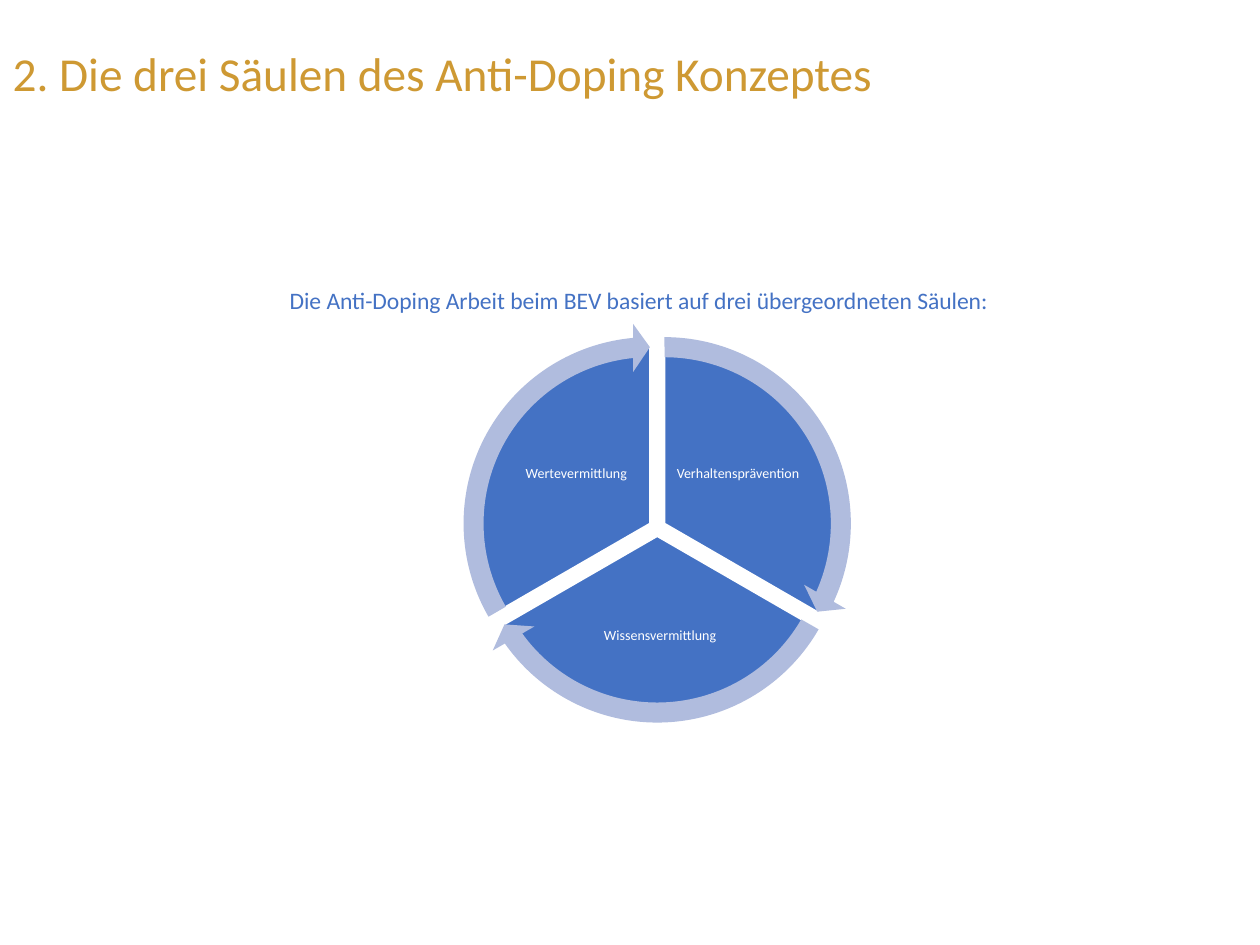
from math import cos, radians, sin

from pptx import Presentation
from pptx.dml.color import RGBColor
from pptx.enum.shapes import MSO_SHAPE
from pptx.enum.text import MSO_ANCHOR, MSO_AUTO_SIZE, PP_ALIGN
from pptx.util import Cm, Pt

COLORS = {"title": "CE9933", "blue": "4472C4", "arrow": "B0BCDE", "white": "FFFFFF"}
FONT = "Calibri"

# label, label offset from the wheel centre and label size (cm), clockwise from the top
PILLARS = [
    ("Verhaltensprävention", 1.63, -1.09, 2.57, 2.13),
    ("Wissensvermittlung", 0.06, 2.18, 3.86, 1.88),
    ("Wertevermittlung", -1.63, -1.09, 2.57, 2.13),
]
SWEEP = 360 / len(PILLARS)


def rgb(name):
    return RGBColor.from_string(COLORS[name])


def format_text(p, size, color, align=PP_ALIGN.LEFT):
    p.alignment = align
    p.font.name = FONT
    p.font.size = Pt(size)
    p.font.color.rgb = rgb(color)


def centred_box(cx, cy, w, h):
    return Cm(cx - w / 2), Cm(cy - h / 2), Cm(w), Cm(h)


def adj_angle(degrees):
    """Convert degrees to the unit that shape adjustments use."""
    return degrees % 360 * 0.6


def add_round_shape(shapes, kind, cx, cy, diameter, color, adjustments):
    sp = shapes.add_shape(kind, *centred_box(cx, cy, diameter, diameter))
    sp.shadow.inherit = False
    sp.fill.solid()
    sp.fill.fore_color.rgb = rgb(color)
    sp.line.fill.background()
    for i, value in enumerate(adjustments):
        sp.adjustments[i] = value
    return sp


def add_label(shapes, text, cx, cy, w, h):
    tf = shapes.add_textbox(*centred_box(cx, cy, w, h)).text_frame
    tf.word_wrap = True
    tf.vertical_anchor = MSO_ANCHOR.MIDDLE
    tf.margin_left = tf.margin_right = tf.margin_top = tf.margin_bottom = Cm(0.03)
    p = tf.paragraphs[0]
    p.text = text
    p.line_spacing = 0.9
    format_text(p, 8, "white", PP_ALIGN.CENTER)


def add_wheel(s, cx, cy, pie_size, arrow_size, gap):
    """Draw the pillars as sectors moved out by gap, each with an arrow around it."""
    shapes = s.shapes.add_group_shape().shapes
    arrows = []
    for i, (text, dx, dy, w, h) in enumerate(PILLARS):
        start = 270 + i * SWEEP
        end = start + SWEEP
        middle = radians(start + SWEEP / 2)
        x, y = cx + gap * cos(middle), cy + gap * sin(middle)
        sector = add_round_shape(shapes, MSO_SHAPE.PIE, x, y, pie_size, "blue",
                                 [adj_angle(start), adj_angle(end)])
        sector.line.color.rgb = rgb("white")
        sector.line.width = Pt(1)
        add_label(shapes, text, cx + dx, cy + dy, w, h)
        arrows.append((x, y, start, end))
    head = 5.46
    for x, y, start, end in arrows:
        add_round_shape(shapes, MSO_SHAPE.CIRCULAR_ARROW, x, y, arrow_size, "arrow",
                        [0.05, adj_angle(head), adj_angle(end - head),
                         adj_angle(start), 0.06])


def add_title(s, left, top, width, height):
    title = s.shapes.title
    title.left, title.top, title.width, title.height = map(Cm, (left, top, width, height))
    tf = title.text_frame
    tf.vertical_anchor = MSO_ANCHOR.MIDDLE
    p = tf.paragraphs[0]
    p.text = "2. Die drei Säulen des Anti-Doping Konzeptes"
    p.line_spacing = 0.9
    format_text(p, 27, "title")


def add_intro(s, left, top, width, height):
    tf = s.shapes.add_textbox(*map(Cm, (left, top, width, height))).text_frame
    tf.word_wrap = False
    tf.auto_size = MSO_AUTO_SIZE.SHAPE_TO_FIT_TEXT
    p = tf.paragraphs[0]
    p.text = "Die Anti-Doping Arbeit beim BEV basiert auf drei übergeordneten Säulen:"
    format_text(p, 13.5, "blue")


def main():
    prs = Presentation()
    prs.slide_width, prs.slide_height = Cm(25.4), Cm(19.05)
    s = prs.slides.add_slide(prs.slide_layouts[5])
    add_title(s, 0, 0, 25.4, 3.07)
    add_wheel(s, cx=13.25, cy=10.64, pie_size=7.19, arrow_size=8.08, gap=0.17)
    add_intro(s, 5.59, 5.64, 14.81, 0.84)
    prs.save("out.pptx")


if __name__ == "__main__":
    main()
